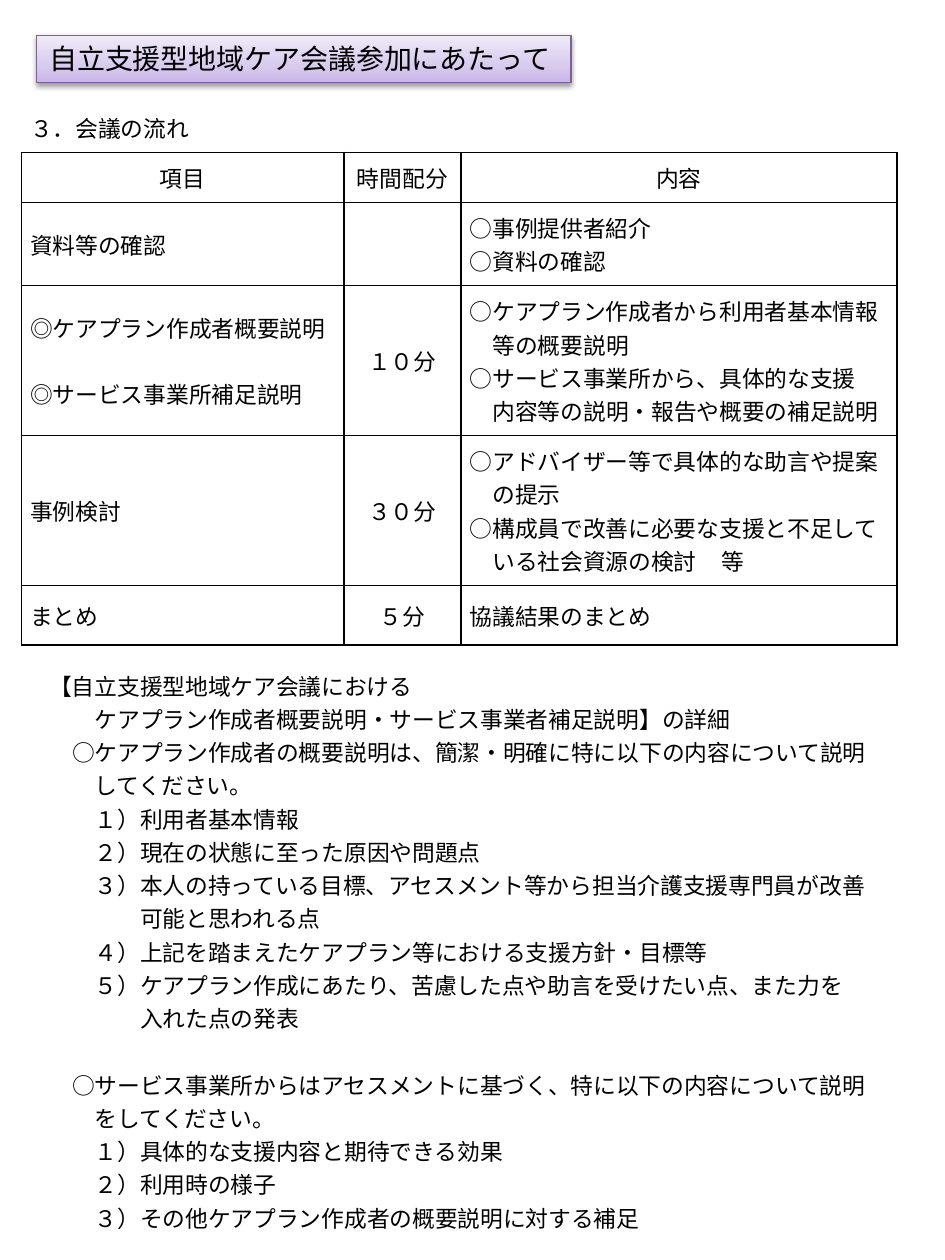
import copy

import lxml.etree
import pptx
import pptx.dml.color
import pptx.enum.text
import pptx.oxml.ns
import pptx.util

Cm, Pt = pptx.util.Cm, pptx.util.Pt
ALIGN, ANCHOR = pptx.enum.text.PP_ALIGN, pptx.enum.text.MSO_ANCHOR
FONT = "Noto Sans CJK JP"
COLORS = {"ink": "000000", "paper": "FFFFFF", "edge": "7D60A0",
          "low": "C9B5E8", "mid": "D8CBEE", "high": "F0EAF9"}
TITLE = "自立支援型地域ケア会議参加にあたって"
HEADS = ["項目", "時間配分", "内容"]
ROWS = [
    ([(0, "資料等の確認")], "", [(0, "○事例提供者紹介"), (0, "○資料の確認")]),
    ([(0, "◎ケアプラン作成者概要説明"), (0, "◎サービス事業所補足説明", 19)], "１０分",
     [(0, "○ケアプラン作成者から利用者基本情報"), (1, "等の概要説明"),
      (0, "○サービス事業所から、具体的な支援"), (1, "内容等の説明・報告や概要の補足説明")]),
    ([(0, "事例検討")], "３０分",
     [(0, "○アドバイザー等で具体的な助言や提案"), (1, "の提示"),
      (0, "○構成員で改善に必要な支援と不足して"), (0, "　いる社会資源の検討\t等")]),
    ([(0, "まとめ")], "５分", [(0, "協議結果のまとめ")]),
]
NOTES = [
    (0, "【自立支援型地域ケア会議における"),
    (2, "ケアプラン作成者概要説明・サービス事業者補足説明】の詳細"),
    (1, "○ケアプラン作成者の概要説明は、簡潔・明確に特に以下の内容について説明"),
    (2, "してください。"),
    (2, "１）利用者基本情報"),
    (2, "２）現在の状態に至った原因や問題点"),
    (2, "３）本人の持っている目標、アセスメント等から担当介護支援専門員が改善"),
    (4, "可能と思われる点"),
    (2, "４）上記を踏まえたケアプラン等における支援方針・目標等"),
    (2, "５）ケアプラン作成にあたり、苦慮した点や助言を受けたい点、また力を"),
    (4, "入れた点の発表"),
    (1, "○サービス事業所からはアセスメントに基づく、特に以下の内容について説明", 19),
    (2, "をしてください。"),
    (2, "１）具体的な支援内容と期待できる効果"),
    (2, "２）利用時の様子"),
    (2, "３）その他ケアプラン作成者の概要説明に対する補足"),
]


def tint(name):
    """Return the named colour."""
    return pptx.dml.color.RGBColor.from_string(COLORS[name])


def node(root, tag, **attrs):
    """Append a drawing element and return it."""
    return lxml.etree.SubElement(root, pptx.oxml.ns.qn("a:" + tag),
                                 {key: str(val) for key, val in attrs.items()})


def write(frame, lines, size=13, align=ALIGN.LEFT, pitch=19, tab=None):
    """Fill a frame with (indent in characters, text, gap before) lines."""
    for num, (depth, text, *gap) in enumerate(lines):
        para = frame.add_paragraph() if num else frame.paragraphs[0]
        para.alignment = align
        para.line_spacing = Pt(pitch) if pitch else None
        para.space_before = Pt(sum(gap))
        props = para._p.get_or_add_pPr()
        props.set("marL", str(Pt(size * depth)))
        props.set("indent", "0")
        node(props, "buNone")
        if tab and "\t" in text:
            node(node(props, "tabLst"), "tab", pos=tab, algn="l")
        run = para.add_run()
        run.text = text
        run.font.size, run.font.bold = Pt(size), False
        run.font.name, run.font.color.rgb = FONT, tint("ink")
        node(run._r.get_or_add_rPr(), "ea", typeface=FONT)


def place(shape, box):
    """Move a shape to a box of left, top, width and height."""
    shape.left, shape.top, shape.width, shape.height = map(Cm, box)
    shape.text_frame.auto_size = pptx.enum.text.MSO_AUTO_SIZE.NONE


def banner(shape, box):
    """Draw the shaded title bar."""
    place(shape, box)
    frame = shape.text_frame
    frame.word_wrap, frame.vertical_anchor = False, ANCHOR.MIDDLE
    write(frame, [(0, TITLE)], size=16, pitch=None)
    shape.fill.gradient()
    shape.fill.gradient_angle = 90
    stops = shape.element.spPr.find(".//" + pptx.oxml.ns.qn("a:gsLst"))
    while len(stops) < 3:
        stops.append(copy.deepcopy(stops[0]))
    for stop, spot, name in zip(shape.fill.gradient_stops, (0, 0.35, 1),
                                ("low", "mid", "high")):
        stop.position, stop.color.rgb = spot, tint(name)
    shape.line.color.rgb, shape.line.width = tint("edge"), Pt(0.75)
    glow = node(node(shape.element.spPr, "effectLst"), "outerShdw", blurRad=Pt(3.1),
                dist=Pt(1.6), dir=5400000, rotWithShape=0)
    node(node(glow, "srgbClr", val=COLORS["ink"]), "alpha", val=38000)


def style(cell, sides):
    """Set margins, fill and the given borders of a cell."""
    cell.margin_left = cell.margin_right = Cm(0.18)
    cell.margin_top = cell.margin_bottom = Cm(0.16)
    cell.vertical_anchor = ANCHOR.MIDDLE
    props = cell._tc.get_or_add_tcPr()
    for side in sides:
        line = node(props, "ln" + side, w=Pt(1))
        node(node(line, "solidFill"), "srgbClr", val=COLORS["ink"])
    cell.fill.solid()
    cell.fill.fore_color.rgb = tint("paper")


def agenda(slide, box, cols, rows):
    """Draw the table of the meeting's flow."""
    grid = slide.shapes.add_table(len(rows), len(cols), *map(Cm, box)).table
    grid.first_row = grid.horz_banding = False
    for col, width in zip(grid.columns, cols):
        col.width = Cm(width)
    for num, (row, height) in enumerate(zip(grid.rows, rows)):
        row.height = Cm(height)
        for cell in row.cells:
            style(cell, "LRTB" if num else "B")
    grid.cell(0, 0).merge(grid.cell(0, len(cols) - 1))
    write(grid.cell(0, 0).text_frame, [(0, "３．会議の流れ")])
    for col, head in enumerate(HEADS):
        write(grid.cell(1, col).text_frame, [(0, head)], align=ALIGN.CENTER)
    for num, (item, time, text) in enumerate(ROWS, 2):
        write(grid.cell(num, 0).text_frame, item)
        if time:
            write(grid.cell(num, 1).text_frame, [(0, time)], align=ALIGN.CENTER)
        write(grid.cell(num, 2).text_frame, text, tab=Cm(7.8))


def detail(shape, box):
    """Fill the body with the notes on what to explain."""
    place(shape, box)
    shape.text_frame.word_wrap = True
    shape.text_frame.vertical_anchor = ANCHOR.TOP
    write(shape.text_frame, NOTES)


def main():
    """Build and save the slide."""
    deck = pptx.Presentation()
    deck.slide_width, deck.slide_height = Cm(19.05), Cm(25.4)
    slide = deck.slides.add_slide(deck.slide_layouts[1])
    banner(slide.shapes.title, (0.74, 0.71, 10.77, 0.95))
    agenda(slide, (0.43, 2.06, 17.65, 10.94), (6.5, 2.36, 8.79),
           (1.01, 1.01, 1.68, 3.02, 3.02, 1.2))
    detail(slide.placeholders[1], (0.74, 13.31, 17.81, 11.76))
    deck.save("out.pptx")


if __name__ == "__main__":
    main()
